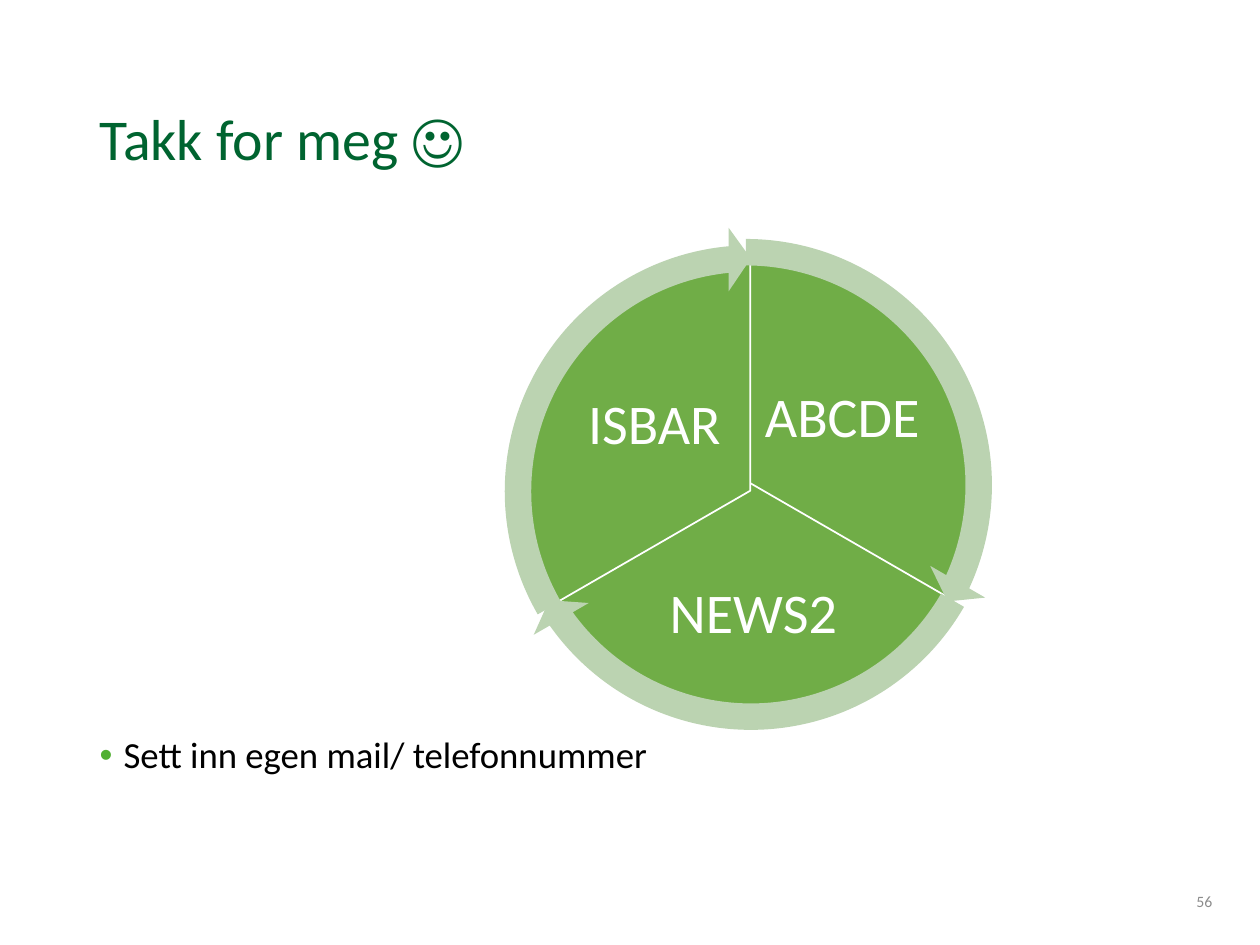
"""Build the closing slide with a three-part cycle of pie slices and arrows."""
from lxml import etree
from pptx import Presentation
from pptx.dml.color import RGBColor
from pptx.enum.shapes import MSO_SHAPE
from pptx.enum.text import MSO_ANCHOR, MSO_AUTO_SIZE, PP_ALIGN
from pptx.oxml.ns import qn
from pptx.util import Inches, Pt

PIE, ARROW = MSO_SHAPE.PIE, MSO_SHAPE.CIRCULAR_ARROW
LEFT, CENTER, RIGHT = PP_ALIGN.LEFT, PP_ALIGN.CENTER, PP_ALIGN.RIGHT
TOP, MIDDLE = MSO_ANCHOR.TOP, MSO_ANCHOR.MIDDLE
NO_FIT = MSO_AUTO_SIZE.NONE

THEME = {
    "font": "Calibri",
    "title": (33, "006430"), "body": (21, "000000"),
    "label": (32, "FFFFFF"), "number": (9, "8C8C8C"),
    "bullet": "50AF31", "slice": "70AD47", "arrow": "BBD3B1", "line": "FFFFFF",
}

TITLE = ("Takk for meg ☺", (0.69, 0.4, 8.62, 1.45))
BODY = ("Sett inn egen mail/ telefonnummer", (0.69, 5.8, 8.62, 0.96))
NUMBER = ("56", (9.31, 6.95, 0.41, 0.4))
CYCLE = [
    {"label": "ABCDE", "slice": (4.06, 1.98), "arrow": (3.82, 1.75), "box": (6.02, 2.77, 1.33, 1.11)},
    {"label": "NEWS2", "slice": (4.09, 1.97), "arrow": (3.86, 1.74), "box": (4.98, 4.39, 2, 0.98)},
    {"label": "ISBAR", "slice": (4.09, 2.03), "arrow": (3.86, 1.8), "box": (4.53, 2.83, 1.33, 1.11)},
]
SLICE_SIZE, ARROW_SIZE = 3.73, 4.2
ANGLE_UNIT = 0.6
START, SWEEP = 270, 120
ARROW_WIDTH, HEAD_ANGLE, HEAD_WIDTH = 0.05, 3.28, 0.06


def rgb(value):
    return RGBColor.from_string(value)


def place(s, box):
    s.left, s.top, s.width, s.height = map(Inches, box)


def write(s, text, style, align, anchor, inset=None, spacing=0.9):
    tf = s.text_frame
    tf.word_wrap, tf.auto_size, tf.vertical_anchor = True, NO_FIT, anchor
    if inset is not None:
        tf.margin_left = tf.margin_top = tf.margin_right = tf.margin_bottom = Inches(inset)
    p = tf.paragraphs[0]
    p.alignment, p.line_spacing, p.space_before = align, spacing, Pt(0)
    r = p.add_run()
    r.text = text
    size, color = THEME[style]
    r.font.name, r.font.size = THEME["font"], Pt(size)
    r.font.color.rgb = rgb(color)
    return p


def add_bullet(p):
    pPr = p._p.get_or_add_pPr()
    pPr.set("marL", str(Inches(0.19)))
    pPr.set("indent", str(Inches(-0.19)))
    color = etree.SubElement(pPr, qn("a:buClr"))
    etree.SubElement(color, qn("a:srgbClr"), val=THEME["bullet"])
    etree.SubElement(pPr, qn("a:buFont"), typeface="Arial")
    etree.SubElement(pPr, qn("a:buChar"), char="•")


def add_round(slide, kind, at, size, fill, adjustments):
    s = slide.shapes.add_shape(kind, *map(Inches, (*at, size, size)))
    for i, value in enumerate(adjustments):
        s.adjustments[i] = value
    s.shadow.inherit = False
    s.fill.solid()
    s.fill.fore_color.rgb = rgb(THEME[fill])
    return s


def add_cycle(slide):
    angles = [((START + i * SWEEP) % 360 * ANGLE_UNIT,
               (START + (i + 1) * SWEEP) % 360 * ANGLE_UNIT) for i in range(len(CYCLE))]
    for part, (start, end) in zip(CYCLE, angles):
        s = add_round(slide, PIE, part["slice"], SLICE_SIZE, "slice", (start, end))
        s.line.color.rgb = rgb(THEME["line"])
        s.line.width = Pt(1)
        label = slide.shapes.add_textbox(*map(Inches, part["box"]))
        write(label, part["label"], "label", CENTER, MIDDLE, 0.04)
    for part, (start, end) in zip(CYCLE, angles):
        s = add_round(slide, ARROW, part["arrow"], ARROW_SIZE, "arrow",
                      (ARROW_WIDTH, HEAD_ANGLE, end - HEAD_ANGLE, start, HEAD_WIDTH))
        s.line.fill.background()


def main():
    prs = Presentation()
    prs.slide_width, prs.slide_height = Inches(10), Inches(7.5)
    slide = prs.slides.add_slide(prs.slide_layouts[1])
    title, body = slide.shapes.title, slide.placeholders[1]

    place(title, TITLE[1])
    write(title, TITLE[0], "title", LEFT, MIDDLE)
    place(body, BODY[1])
    add_bullet(write(body, BODY[0], "body", LEFT, TOP))
    number = slide.shapes.add_textbox(*map(Inches, NUMBER[1]))
    write(number, NUMBER[0], "number", RIGHT, MIDDLE, spacing=1.0)
    add_cycle(slide)
    prs.save("out.pptx")


if __name__ == "__main__":
    main()
